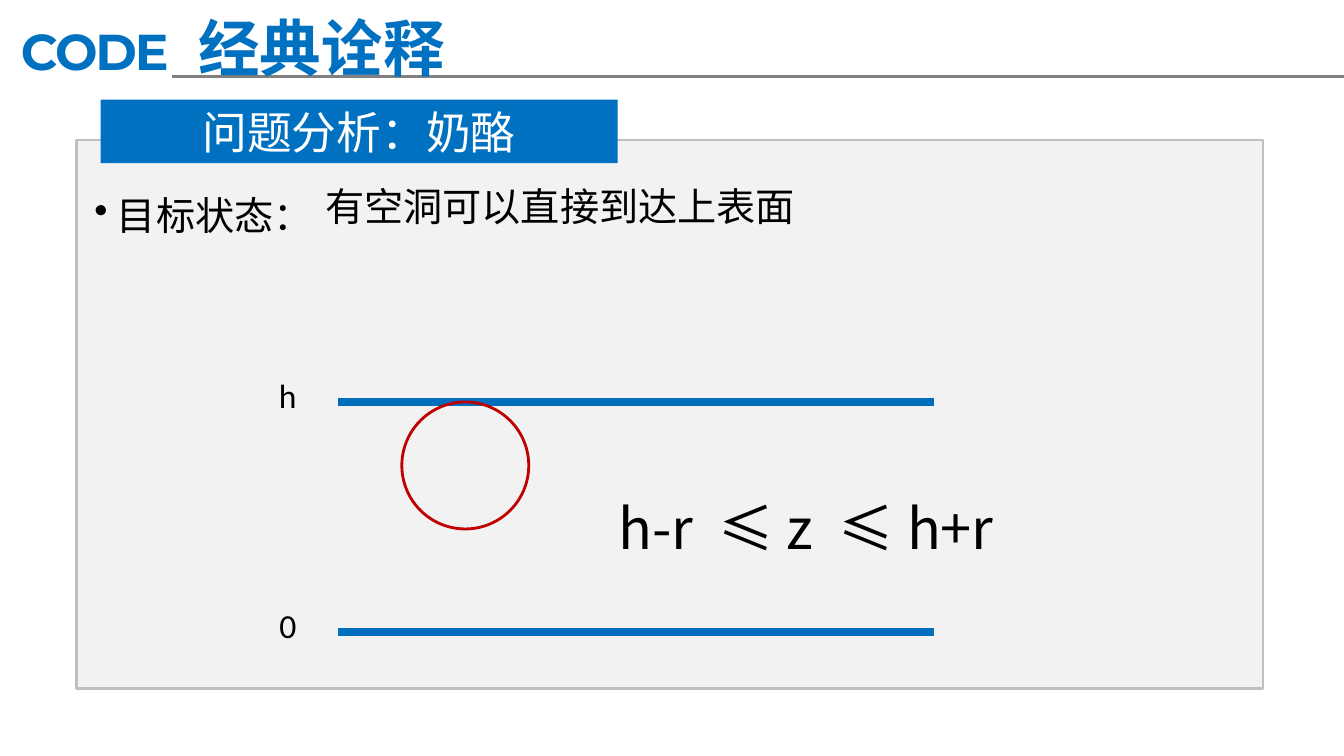
from dataclasses import dataclass
from typing import NamedTuple

from lxml.etree import SubElement
from pptx import Presentation
from pptx.dml.color import RGBColor
from pptx.enum.shapes import MSO_CONNECTOR, MSO_SHAPE
from pptx.enum.text import MSO_ANCHOR, MSO_AUTO_SIZE, PP_ALIGN
from pptx.oxml.ns import qn
from pptx.util import Cm, Pt


@dataclass(frozen=True)
class Theme:
    blue: str = "0070C0"
    level_blue: str = "006EBC"
    red: str = "C00000"
    black: str = "000000"
    white: str = "FFFFFF"
    rule_grey: str = "808080"
    panel_fill: str = "F2F2F2"
    panel_line: str = "BFBFBF"
    chinese_font: str = "Noto Sans CJK SC"
    contest_font: str = "Montserrat"
    label_font: str = "Calibri"
    title_size: int = 44
    formula_size: int = 40
    contest_size: int = 36
    tab_size: int = 32
    body_size: int = 28
    label_size: int = 24


THEME = Theme()


class Box(NamedTuple):
    """A rectangle in centimetres."""
    left: float
    top: float
    width: float
    height: float

    def inner(self, left, top, width, height):
        """Return a box placed relative to this box's top left corner."""
        return Box(self.left + left, self.top + top, width, height)

    def lengths(self):
        return [Cm(value) for value in self]


def write_text(shape, text, size, color, font=THEME.chinese_font, bold=False, align=PP_ALIGN.LEFT):
    """Fill a shape with one paragraph and return that paragraph."""
    shape.text_frame.text = text
    paragraph = shape.text_frame.paragraphs[0]
    paragraph.alignment = align
    run = paragraph.runs[0]
    run.font.name = font
    run.font.size = Pt(size)
    run.font.bold = bold
    run.font.color.rgb = RGBColor.from_string(color)
    SubElement(run.font._element, qn("a:ea")).set("typeface", font)
    return paragraph


def add_text(slide, box, text, size, color=THEME.black, wrap=True, **style):
    text_box = slide.shapes.add_textbox(*box.lengths())
    text_box.text_frame.word_wrap = wrap
    text_box.text_frame.auto_size = MSO_AUTO_SIZE.SHAPE_TO_FIT_TEXT
    return write_text(text_box, text, size, color, **style)


def add_shape(slide, kind, box, fill=None, line=None, line_width=0):
    shape = slide.shapes.add_shape(kind, *box.lengths())
    shape.shadow.inherit = False
    for part, color in ((shape.fill, fill), (shape.line.fill, line)):
        if color:
            part.solid()
            part.fore_color.rgb = RGBColor.from_string(color)
        else:
            part.background()
    if line:
        shape.line.width = Pt(line_width)
    return shape


def add_horizontal_line(slide, left, right, y, color, width):
    line = slide.shapes.add_connector(MSO_CONNECTOR.STRAIGHT, Cm(left), Cm(y), Cm(right), Cm(y))
    line.line.color.rgb = RGBColor.from_string(color)
    line.line.width = Pt(width)
    SubElement(line._element.spPr, qn("a:effectLst"))


def add_header(slide, box):
    contest = add_text(slide, box.inner(0.2, 0.33, 4.72, 1.88), "CODE", THEME.contest_size,
                       THEME.blue, font=THEME.contest_font, bold=True)
    contest.runs[0].font._element.set("spc", "-150")
    frame = slide.shapes[-1].text_frame
    frame.margin_left = frame.margin_right = Cm(0.33)
    frame.margin_top = frame.margin_bottom = Cm(0.18)
    add_horizontal_line(slide, box.left + 4.34, box.left + box.width, box.top + 1.93,
                        THEME.rule_grey, 2)
    add_text(slide, box.inner(4.75, 0.13, 11.99, 2.13), "经典诠释", THEME.title_size,
             THEME.blue, bold=True)


def add_analysis_panel(slide, box):
    add_shape(slide, MSO_SHAPE.RECTANGLE, box, THEME.panel_fill, THEME.panel_line, 1.5)
    tab = add_shape(slide, MSO_SHAPE.RECTANGLE, box.inner(0.61, -1.02, 13.03, 1.6), THEME.blue)
    tab.text_frame.vertical_anchor = MSO_ANCHOR.MIDDLE
    write_text(tab, "问题分析：奶酪", THEME.tab_size, THEME.white, align=PP_ALIGN.CENTER)

    goal = add_text(slide, box.inner(0.2, 0.58, 29.21, 1.83), " 目标状态：", THEME.body_size)
    goal.line_spacing = 1.5
    SubElement(goal._p.get_or_add_pPr(), qn("a:buChar")).set("char", "•")
    add_text(slide, box.inner(6.02, 0.94, 12.47, 1.45), "有空洞可以直接到达上表面",
             THEME.body_size, wrap=False)


def add_cheese_diagram(slide, box):
    """Draw the top and bottom surfaces with a hole touching the top one."""
    line_left, label_width, label_height = 2.38, 2.21, 1.27
    for label, level in (("h", 0), ("0", box.height)):
        add_horizontal_line(slide, box.left + line_left, box.left + box.width,
                            box.top + level, THEME.level_blue, 6)
        add_text(slide, box.inner(0, level - 0.8, label_width, label_height), label,
                 THEME.label_size, font=THEME.label_font, align=PP_ALIGN.CENTER)
    add_shape(slide, MSO_SHAPE.OVAL, box.inner(3.98, 0, 3.2, 3.2), line=THEME.red, line_width=2)
    add_text(slide, box.inner(9.19, 2.19, 10.36, 1.96), "h-r  ≤ z  ≤ h+r",
             THEME.formula_size, wrap=False)


def main():
    presentation = Presentation()
    presentation.slide_width, presentation.slide_height = Cm(33.88), Cm(19.05)
    slide = presentation.slides.add_slide(presentation.slide_layouts[6])
    add_header(slide, Box(0, 0, 33.88, 2.2))
    add_analysis_panel(slide, Box(1.93, 3.53, 29.92, 13.82))
    add_cheese_diagram(slide, Box(6.15, 10.13, 17.4, 5.8))
    presentation.save("out.pptx")


if __name__ == "__main__":
    main()
